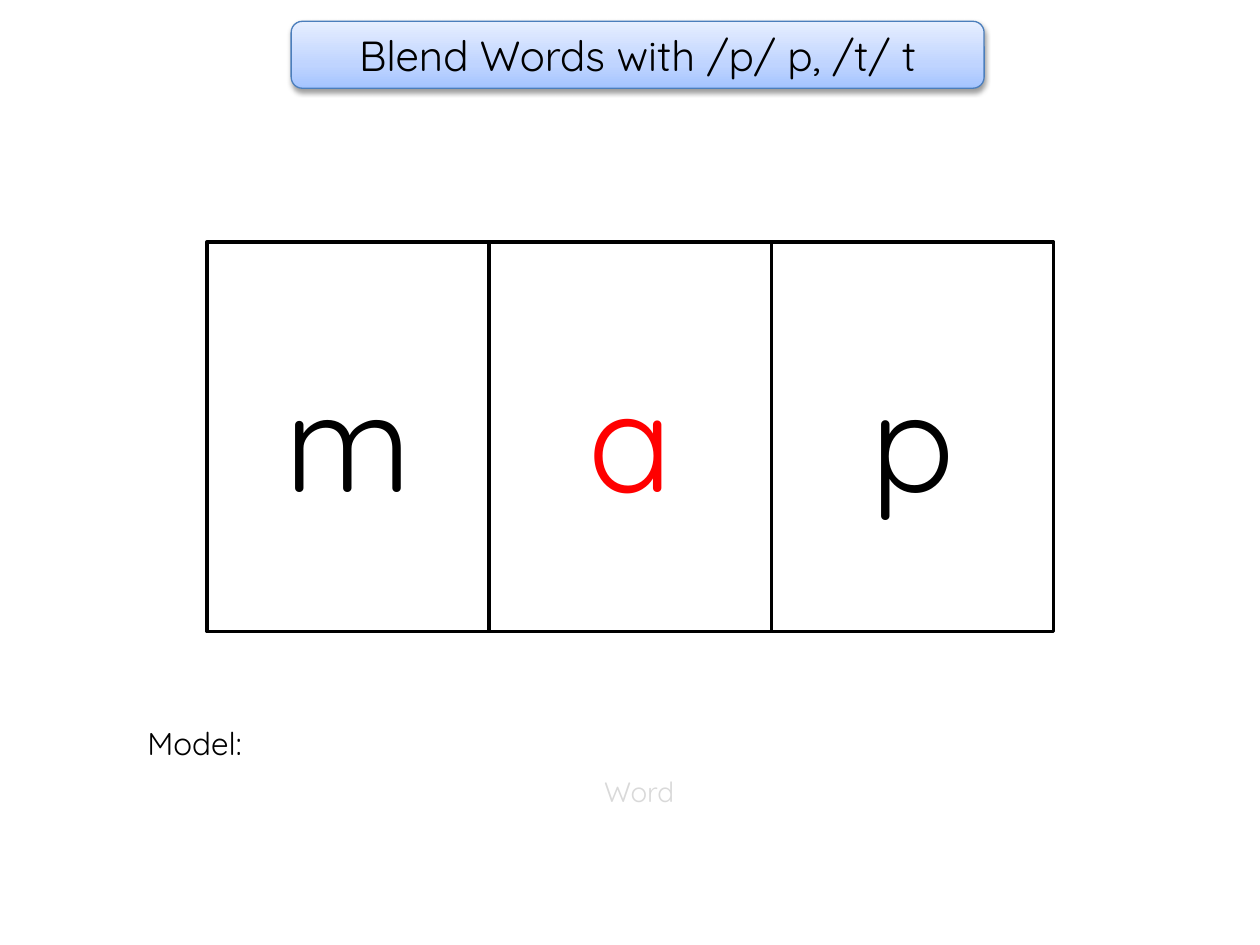
import copy

import lxml.etree
import pptx
import pptx.dml.color
import pptx.enum.shapes
import pptx.enum.text
import pptx.oxml.ns
import pptx.util

Cm = pptx.util.Cm
Pt = pptx.util.Pt
RGBColor = pptx.dml.color.RGBColor
Shape = pptx.enum.shapes.MSO_SHAPE
Align = pptx.enum.text.PP_ALIGN
qn = pptx.oxml.ns.qn

BLACK = RGBColor(0x00, 0x00, 0x00)
WHITE = RGBColor(0xFF, 0xFF, 0xFF)
RED = RGBColor(0xFF, 0x00, 0x00)
LIGHT_GRAY = RGBColor(0xD9, 0xD9, 0xD9)
TITLE_LINE = RGBColor(0x4B, 0x7E, 0xBC)
TITLE_STOPS = [
    (0, RGBColor(0xA4, 0xC4, 0xFF)),
    (0.35, RGBColor(0xBF, 0xD4, 0xFF)),
    (1, RGBColor(0xE6, 0xEE, 0xFF)),
]


def write_text(shape, text, size, color, align=Align.CENTER):
    shape.text_frame.word_wrap = True
    para = shape.text_frame.paragraphs[0]
    para.text = text
    para.alignment = align
    para.font.name = "Quicksand"
    para.font.size = Pt(size)
    para.font.color.rgb = color


deck = pptx.Presentation()
deck.slide_width = Cm(25.4)
deck.slide_height = Cm(19.05)
page = deck.slides.add_slide(deck.slide_layouts[6])

# Title banner with a three-stop gradient
banner = page.shapes.add_shape(
    Shape.ROUNDED_RECTANGLE, Cm(5.87), Cm(0.43), Cm(13.97), Cm(1.35))
banner.fill.gradient()
banner.fill.gradient_angle = 90
stop_list = banner.element.spPr.find(".//" + qn("a:gsLst"))
stop_list.append(copy.deepcopy(stop_list[-1]))
for stop, (position, color) in zip(banner.fill.gradient_stops, TITLE_STOPS):
    stop.position = position
    stop.color.rgb = color
banner.line.color.rgb = TITLE_LINE
banner.line.width = Pt(0.75)
banner.text_frame.vertical_anchor = pptx.enum.text.MSO_ANCHOR.MIDDLE
write_text(banner, "Blend Words with /p/ p, /t/ t", 24, BLACK)

# Soft shadow below the banner
banner.shadow.inherit = False
effects = banner.element.spPr.find(qn("a:effectLst"))
shadow = lxml.etree.SubElement(
    effects, qn("a:outerShdw"), blurRad=str(Pt(3.1)), dist=str(Pt(1.6)),
    dir="5400000", rotWithShape="0")
shadow_color = lxml.etree.SubElement(shadow, qn("a:srgbClr"), val="000000")
lxml.etree.SubElement(shadow_color, qn("a:alpha"), val="38000")

# Letter boxes, side by side
box_width = 5.69
for index, (letter, color) in enumerate([("m", BLACK), ("a", RED), ("p", BLACK)]):
    box = page.shapes.add_shape(
        Shape.RECTANGLE, Cm(4.17 + index * box_width), Cm(4.88),
        Cm(box_width), Cm(7.85))
    box.shadow.inherit = False
    box.fill.solid()
    box.fill.fore_color.rgb = WHITE
    box.line.color.rgb = BLACK
    box.line.width = Pt(2)
    box.text_frame.vertical_anchor = pptx.enum.text.MSO_ANCHOR.MIDDLE
    write_text(box, letter, 80, color)

# Labels under the boxes
model_label = page.shapes.add_textbox(Cm(2.72), Cm(14.48), Cm(3.68), Cm(1.02))
write_text(model_label, "Model:", 18, BLACK, Align.LEFT)
word_label = page.shapes.add_textbox(Cm(0.86), Cm(15.49), Cm(24.05), Cm(0.94))
write_text(word_label, "Word", 16, LIGHT_GRAY)
for label in (model_label, word_label):
    label.text_frame.auto_size = pptx.enum.text.MSO_AUTO_SIZE.SHAPE_TO_FIT_TEXT

deck.save("out.pptx")
